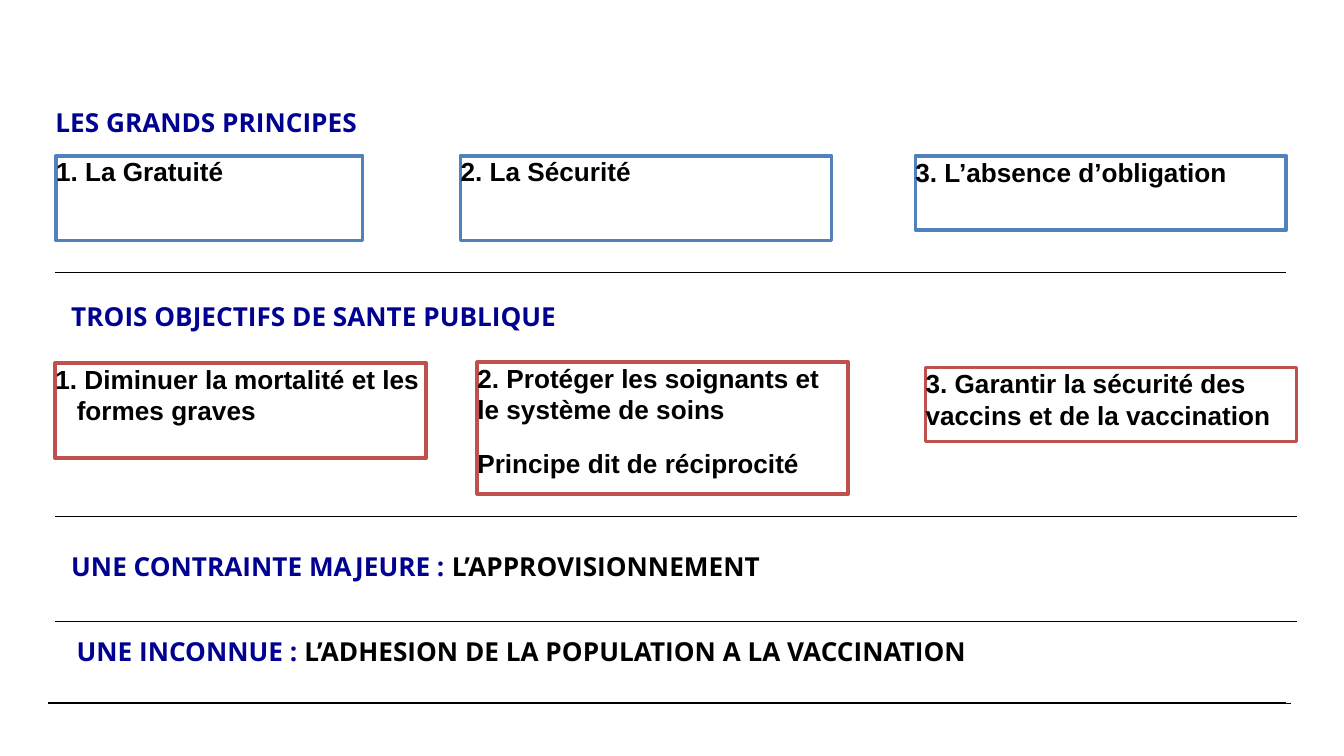
from dataclasses import dataclass

from lxml.etree import SubElement
from pptx import Presentation
from pptx.dml.color import RGBColor as Rgb
from pptx.enum.shapes import MSO_CONNECTOR as Connector, MSO_SHAPE as Shape
from pptx.enum.text import MSO_ANCHOR as Anchor, MSO_AUTO_SIZE as AutoSize, PP_ALIGN as Align
from pptx.oxml.ns import qn
from pptx.util import Inches, Pt


@dataclass(frozen=True)
class Theme:
    """Colours, fonts and sizes of the slide."""
    ink: Rgb = Rgb.from_string("000000")
    paper: Rgb = Rgb.from_string("FFFFFF")
    heading: Rgb = Rgb.from_string("000091")
    principle: Rgb = Rgb.from_string("4F81BD")
    objective: Rgb = Rgb.from_string("C0504D")
    heading_font: str = "Open Sans"
    body_font: str = "Arial"
    text_size: Pt = Pt(14)
    frame: Pt = Pt(2)
    rule: Pt = Pt(0.5)
    footer_rule: Pt = Pt(0.8)


@dataclass(frozen=True)
class Box:
    """An area measured in grid columns and rows."""
    left: float
    top: float
    width: float = 0
    height: float = 0

    def inside(self, left, top, width, height):
        """Return an area placed relative to this one."""
        return Box(self.left + left, self.top + top, width, height)

    def emu(self):
        """Return left, top, width and height as lengths."""
        return [round(n * CELL) for n in (self.left, self.top, self.width, self.height)]


THEME = Theme()
SLIDE_WIDTH = Inches(10)
SLIDE_HEIGHT = SLIDE_WIDTH * 9 // 16
CELL = SLIDE_WIDTH // 100
HEADING_SIZE = (75.6, 3.1)
CARD_WIDTH = 27.6


def style(paragraph, typeface):
    """Apply the shared bold text style to a paragraph."""
    paragraph.alignment = Align.LEFT
    font = paragraph.font
    font.name, font.size, font.bold = typeface, THEME.text_size, True
    font.color.rgb = THEME.ink


def indent(paragraph, margin, first=0.0):
    """Set the left margin and first-line indent in inches."""
    properties = paragraph._p.get_or_add_pPr()
    properties.set("marL", str(Inches(margin)))
    properties.set("indent", str(Inches(first)))
    return properties


def heading(shape, box, label, subject=""):
    """Place a heading with a coloured label and a black subject."""
    shape.left, shape.top, shape.width, shape.height = box.emu()
    frame = shape.text_frame
    frame.word_wrap, frame.auto_size = True, AutoSize.SHAPE_TO_FIT_TEXT
    frame.vertical_anchor = Anchor.MIDDLE
    paragraph = frame.paragraphs[0]
    indent(paragraph, 0.02)
    style(paragraph, THEME.heading_font)
    paragraph.line_spacing = 0.9
    for text, colour in ((label, THEME.heading), (subject, THEME.ink)):
        if text:
            run = paragraph.add_run()
            run.text, run.font.color.rgb = text, colour


def rule(slide, box, weight):
    """Draw a horizontal rule along the top of an area."""
    left, top, width, _ = box.emu()
    line = slide.shapes.add_connector(Connector.STRAIGHT, left, top, left + width, top)
    line.line.color.rgb, line.line.width = THEME.ink, weight
    SubElement(line._element.spPr, qn("a:effectLst"))


def card(slide, box, colour, texts, numbered):
    """Draw a framed card, with automatic numbering if asked."""
    shape = slide.shapes.add_shape(Shape.RECTANGLE, *box.emu())
    shape.shadow.inherit = False
    shape.fill.solid()
    shape.fill.fore_color.rgb = THEME.paper
    shape.line.color.rgb, shape.line.width = colour, THEME.frame
    frame = shape.text_frame
    frame.word_wrap, frame.vertical_anchor = True, Anchor.TOP
    frame.margin_left = frame.margin_top = frame.margin_right = frame.margin_bottom = 0
    for position, text in enumerate(texts):
        paragraph = frame.add_paragraph() if position else frame.paragraphs[0]
        if numbered:
            bullet = SubElement(indent(paragraph, 0.16, -0.16), qn("a:buAutoNum"))
            bullet.set("type", "arabicPeriod")
        paragraph.add_run().text = text
        style(paragraph, THEME.body_font)
        paragraph.space_before = Pt(4 if position else 0)
        paragraph.space_after = Pt(8)


def card_row(slide, box, colour, cards):
    """Place a row of cards, the first one numbered automatically."""
    for position, (left, top, width, height, texts) in enumerate(cards):
        card(slide, box.inside(left, top, width, height), colour, texts, position == 0)


def principles(slide, box):
    """Build the title and its row of three principles."""
    heading(slide.shapes.title, box.inside(-1.2, 0, *HEADING_SIZE), "LES GRANDS PRINCIPES")
    card_row(slide, box, THEME.principle, (
        (0.05, 3.9, 22.8, 6.3, [" La Gratuité"]),
        (30.15, 3.9, CARD_WIDTH, 6.3, ["2. La Sécurité"]),
        (64, 3.9, CARD_WIDTH, 5.5, ["3. L’absence d’obligation"]),
    ))
    rule(slide, box.inside(0, box.height, box.width, 0), THEME.rule)


def objectives(slide, box):
    """Build the heading and row of three public health objectives."""
    heading(slide.shapes.add_textbox(0, 0, 0, 0), box.inside(0, 0, *HEADING_SIZE),
            "TROIS OBJECTIFS DE SANTE PUBLIQUE")
    card_row(slide, box, THEME.objective, (
        (0, 4.9, CARD_WIDTH, 7.1, [" Diminuer la mortalité et les formes graves"]),
        (31.4, 4.85, CARD_WIDTH, 9.8,
         ["2. Protéger les soignants et le système de soins", "Principe dit de réciprocité"]),
        (64.75, 5.25, CARD_WIDTH, 5.5,
         ["3. Garantir la sécurité des vaccins et de la vaccination"]),
    ))
    rule(slide, box.inside(0, box.height, box.width, 0), THEME.rule)


def challenges(slide, box):
    """Build the constraint and the unknown, parted by a rule."""
    for left, top, label, subject in (
        (0, 0, "UNE CONTRAINTE MAJEURE : ", "L’APPROVISIONNEMENT"),
        (0.4, 6.35, "UNE INCONNUE : ", "L’ADHESION DE LA POPULATION A LA VACCINATION"),
    ):
        heading(slide.shapes.add_textbox(0, 0, 0, 0),
                box.inside(left, top, *HEADING_SIZE), label, subject)
    rule(slide, box.inside(0, 5.55, box.width, 0), THEME.rule)


def footer(slide, box):
    """Draw the two overlapping footer rules."""
    for shift, drop in ((0, 0), (0.4, 0.05)):
        rule(slide, box.inside(shift, drop, box.width, 0), THEME.footer_rule)


def main():
    """Build and save the slide."""
    deck = Presentation()
    deck.slide_width, deck.slide_height = SLIDE_WIDTH, SLIDE_HEIGHT
    slide = deck.slides.add_slide(deck.slide_layouts[5])
    footer(slide, Box(3.55, 52.3, 92.1))
    principles(slide, Box(4.12, 7.7, 91.55, 12.6))
    objectives(slide, Box(4.12, 22.1, 92.35, 16.3))
    challenges(slide, Box(4.12, 40.7, 92.35, 9.4))
    deck.save("out.pptx")


if __name__ == "__main__":
    main()
